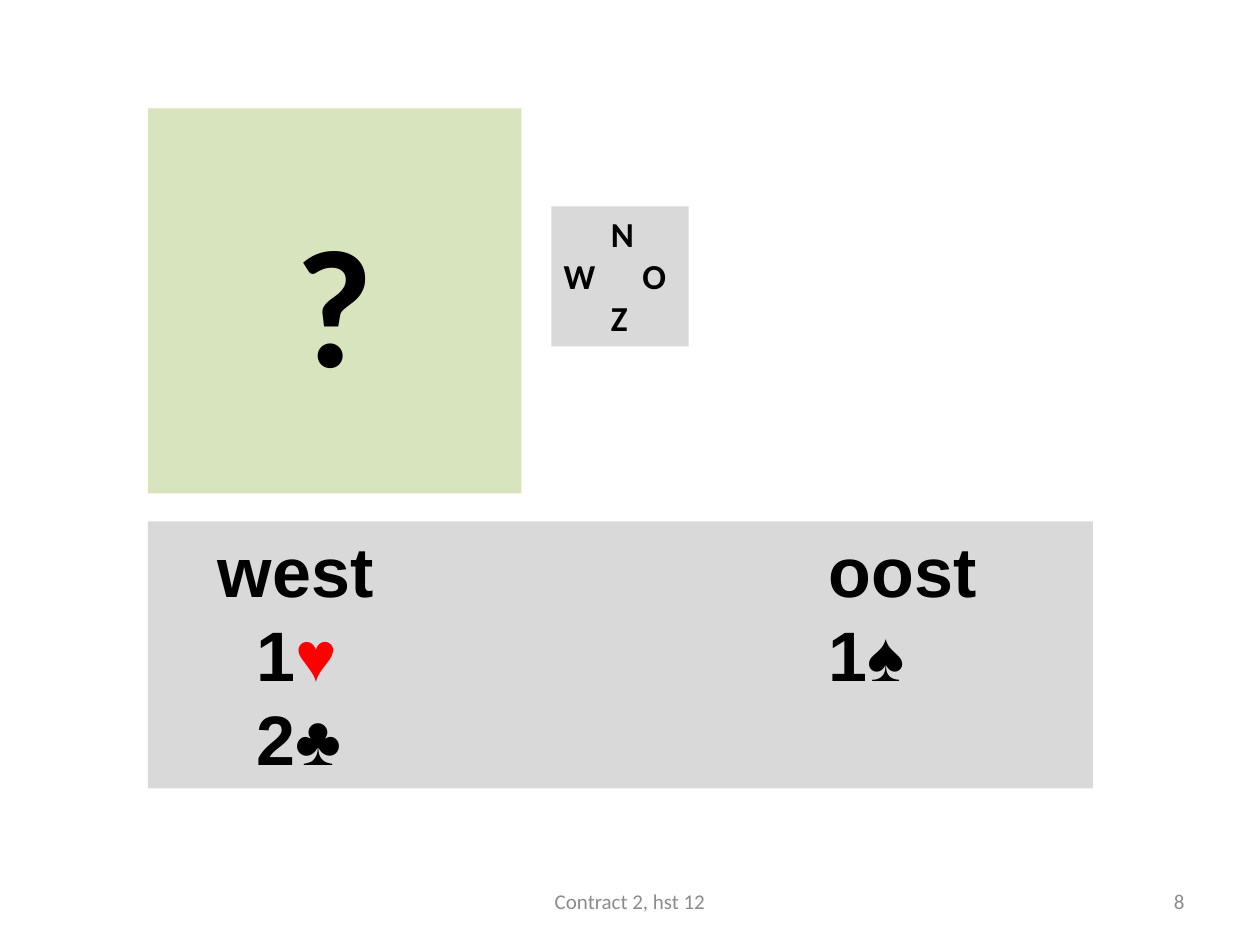
"""Build a bridge bidding slide with a hidden hand, a compass and a bid table."""
from lxml import etree
from pptx import Presentation
from pptx.dml.color import RGBColor
from pptx.enum.shapes import MSO_SHAPE
from pptx.enum.text import MSO_ANCHOR, PP_ALIGN
from pptx.oxml.ns import qn
from pptx.util import Pt

RECTANGLE = MSO_SHAPE.RECTANGLE
TOP, MIDDLE = MSO_ANCHOR.TOP, MSO_ANCHOR.MIDDLE
LEFT, CENTER, RIGHT = PP_ALIGN.LEFT, PP_ALIGN.CENTER, PP_ALIGN.RIGHT
BLACK = RGBColor(0x00, 0x00, 0x00)
RED = RGBColor(0xFF, 0x00, 0x00)
GREY = RGBColor(0x8C, 0x8C, 0x8C)
PANEL = RGBColor(0xD9, 0xD9, 0xD9)
GREEN = RGBColor(0xD7, 0xE4, 0xBD)

COMPASS = ["\tN", "W\t\tO", "\tZ"]
BIDS = ["\twest\t\toost", "\t\t1♥\t\t1♠", "\t\t2♣"]
SUIT_COLOURS = {"♥": RED}

HEADING = {"name": "Calibri", "size": Pt(96), "bold": True}
COMPASS_FONT = {"name": "Calibri", "size": Pt(20), "bold": True}
BID_FONT = {"name": "Arial", "size": Pt(40), "bold": True}
FOOTER_FONT = {"name": "Calibri", "size": Pt(12), "bold": False}

BOXES = [
    {"at": (84.5, 62, 213.5, 220), "fill": GREEN, "lines": ["?"], "font": HEADING,
     "align": CENTER, "frame": {"margin_top": Pt(52)}},
    {"at": (315, 118, 78.5, 80), "fill": PANEL, "lines": COMPASS, "font": COMPASS_FONT,
     "tabs": (27, 45)},
    {"at": (84.5, 298, 540, 152.5), "fill": PANEL, "lines": BIDS, "font": BID_FONT,
     "tabs": (33, 55, 360, 382)},
    {"at": (516, 500.5, 168, 28.5), "lines": ["8"], "font": FOOTER_FONT,
     "align": RIGHT, "colour": GREY, "frame": {"vertical_anchor": MIDDLE}},
    {"at": (246, 500.5, 228, 28.5), "lines": ["Contract 2, hst 12"], "font": FOOTER_FONT,
     "align": CENTER, "colour": GREY, "frame": {"vertical_anchor": MIDDLE}},
]


def set_values(target, values):
    """Set each named attribute of the target."""
    for name, value in values.items():
        setattr(target, name, value)


def split_suits(line):
    """Cut a line into parts so that each coloured suit stands alone."""
    for suit in SUIT_COLOURS:
        line = line.replace(suit, f"\n{suit}\n")
    return [part for part in line.split("\n") if part]


def add_tabs(para, stops):
    """Give the paragraph left tab stops, in points."""
    tab_list = etree.SubElement(para._p.get_or_add_pPr(), qn("a:tabLst"))
    for stop in stops:
        etree.SubElement(tab_list, qn("a:tab"), pos=str(Pt(stop)), algn="l")


def add_box(page, item):
    """Add one filled panel or plain text box with its lines."""
    place = [Pt(value) for value in item["at"]]
    if "fill" in item:
        box = page.shapes.add_shape(RECTANGLE, *place)
        box.shadow.inherit = False
        box.fill.solid()
        box.fill.fore_color.rgb = item["fill"]
        box.line.fill.background()
    else:
        box = page.shapes.add_textbox(*place)
    frame = box.text_frame
    set_values(frame, {"word_wrap": True, "vertical_anchor": TOP, **item.get("frame", {})})
    for index, line in enumerate(item["lines"]):
        para = frame.add_paragraph() if index else frame.paragraphs[0]
        para.alignment = item.get("align", LEFT)
        if "tabs" in item:
            add_tabs(para, item["tabs"])
        for part in split_suits(line):
            span = para.add_run()
            span.text = part
            set_values(span.font, item["font"])
            span.font.color.rgb = SUIT_COLOURS.get(part, item.get("colour", BLACK))


def main():
    """Build and save the deck."""
    deck = Presentation()
    set_values(deck, {"slide_width": Pt(720), "slide_height": Pt(540)})
    page = deck.slides.add_slide(deck.slide_layouts[6])
    for item in BOXES:
        add_box(page, item)
    deck.save("out.pptx")


if __name__ == "__main__":
    main()
